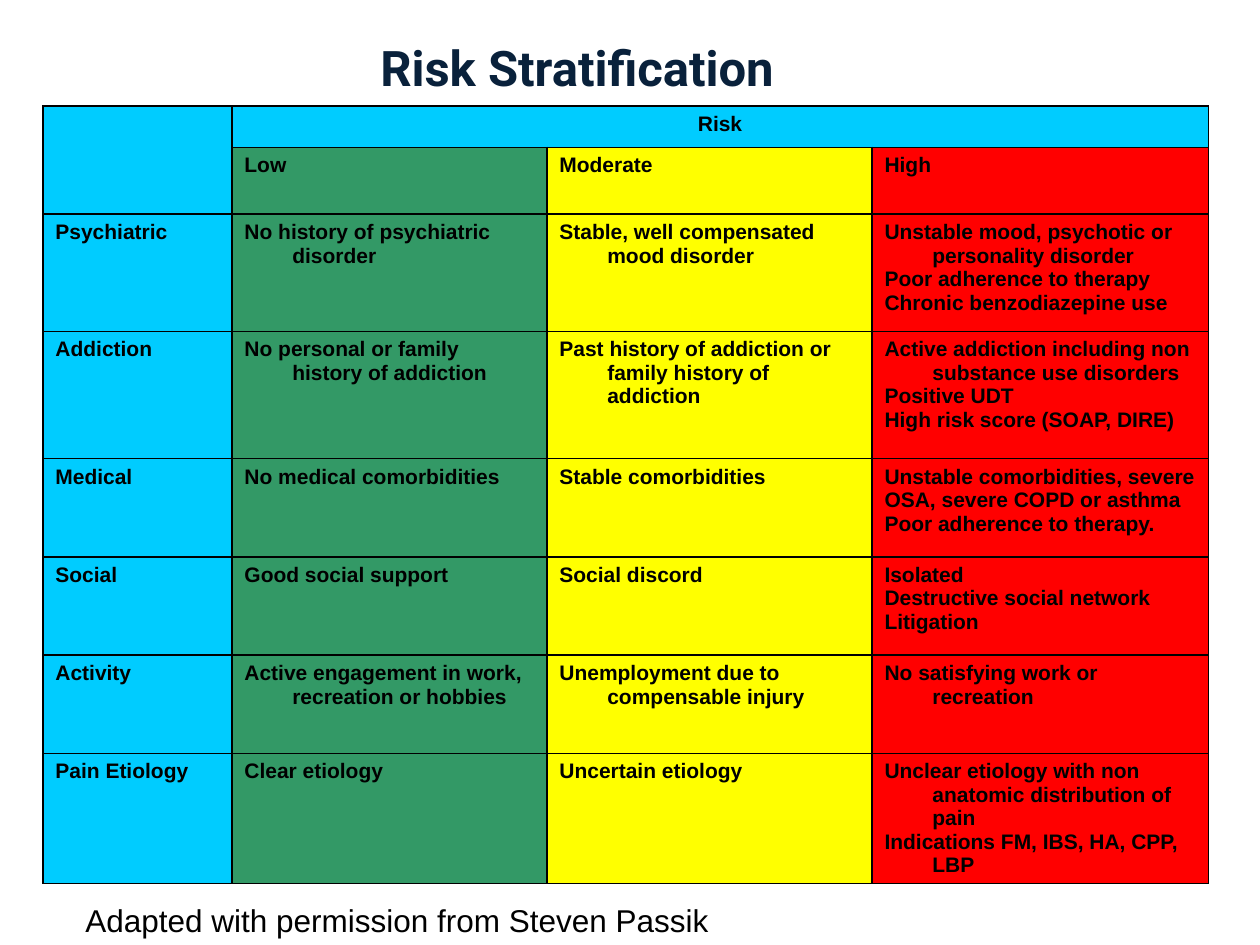
from lxml.etree import SubElement
from pptx import Presentation
from pptx.dml.color import RGBColor
from pptx.enum.text import PP_ALIGN
from pptx.oxml.ns import qn
from pptx.util import Inches, Pt

CYAN, GREEN, YELLOW, RED, BLACK = "00CCFF", "339966", "FFFF00", "FF0000", "000000"
FILLS = [CYAN, GREEN, YELLOW, RED]
WIDTHS = [1.5, 2.5, 2.58, 2.67]
HEIGHTS = [0.33, 0.53, 0.93, 1.01, 0.78, 0.78, 0.78, 1.03]
ROWS = [
    ["", "Risk", "", ""],
    ["", "Low", "Moderate", "High"],
    ["Psychiatric", "No history of psychiatric disorder",
     "Stable, well compensated mood disorder",
     "Unstable mood, psychotic or personality disorder\n"
     "Poor adherence to therapy\nChronic benzodiazepine use"],
    ["Addiction", "No personal or family history of addiction",
     "Past history of addiction or family history of addiction",
     "Active addiction including non substance use disorders\n"
     ">Positive UDT\n>High risk score (SOAP, DIRE)"],
    ["Medical", "No medical comorbidities", "Stable comorbidities",
     "Unstable comorbidities, severe\nOSA, severe COPD or asthma\n"
     "Poor adherence to therapy."],
    ["Social", "Good social support", "Social discord",
     "Isolated\nDestructive social network\nLitigation"],
    ["Activity", "Active engagement in work, recreation or hobbies",
     "Unemployment due to compensable injury",
     "No satisfying work or recreation"],
    ["Pain Etiology", "Clear etiology", "Uncertain etiology",
     "Unclear etiology with non anatomic distribution of pain\n"
     "Indications FM, IBS, HA, CPP, LBP"],
]


def color(code):
    """Turn a hex string into a colour."""
    return RGBColor.from_string(code)


class Deck:
    def __init__(self):
        self.prs = Presentation()
        self.prs.slide_width, self.prs.slide_height = Inches(10), Inches(7.5)
        self.slide = self.prs.slides.add_slide(self.prs.slide_layouts[6])
        self.body = {"name": "Arial", "size": Pt(12), "bold": True}

    def words(self, para, text, form, code):
        run = para.add_run()
        run.text = text
        for key, value in form.items():
            setattr(run.font, key, value)
        run.font.color.rgb = color(code)

    def label(self, text, box, form, code):
        frame = self.slide.shapes.add_textbox(*map(Inches, box)).text_frame
        frame.word_wrap = True
        self.words(frame.paragraphs[0], text, form, code)

    def border(self, cell):
        props = cell._tc.get_or_add_tcPr()
        for side in ("lnL", "lnR", "lnT", "lnB"):
            line = SubElement(props, qn(f"a:{side}"), w=str(Pt(1)))
            fill = SubElement(line, qn("a:solidFill"))
            SubElement(fill, qn("a:srgbClr"), val=BLACK)

    def cell(self, cell, text, code):
        self.border(cell)
        cell.fill.solid()
        cell.fill.fore_color.rgb = color(code)
        frame = cell.text_frame
        for i, line in enumerate(text.split("\n")):
            para = frame.add_paragraph() if i else frame.paragraphs[0]
            para.level = int(line.startswith(">"))
            props = para._p.get_or_add_pPr()
            props.set("marL", str(Inches(0.38)))
            props.set("indent", str(Inches(-0.38)))
            if line:
                self.words(para, line.lstrip(">"), self.body, BLACK)
            else:
                SubElement(para._p, qn("a:endParaRPr"), sz="1200")

    def table(self, rows, left, top):
        box = map(Inches, (left, top, sum(WIDTHS), sum(HEIGHTS)))
        grid = self.slide.shapes.add_table(len(rows), len(WIDTHS), *box).table
        grid.first_row = grid.horz_banding = False
        for col, width in zip(grid.columns, WIDTHS):
            col.width = Inches(width)
        for r, row in enumerate(rows):
            grid.rows[r].height = Inches(HEIGHTS[r])
            for c, text in enumerate(row):
                self.cell(grid.cell(r, c), text, FILLS[c] if r else CYAN)
        grid.cell(0, 0).merge(grid.cell(1, 0))
        grid.cell(0, 1).merge(grid.cell(0, 3))
        grid.cell(0, 1).text_frame.paragraphs[0].alignment = PP_ALIGN.CENTER


def main():
    deck = Deck()
    deck.table(ROWS, 0.34, 0.84)
    deck.label("Adapted with permission from Steven Passik",
               (0.58, 7.1, 5.74, 0.4), {"name": "Arial", "size": Pt(18)}, BLACK)
    deck.label("Risk Stratification", (2.92, 0.25, 6.75, 0.57),
               {"name": "Roboto", "size": Pt(28), "bold": True}, "09213B")
    deck.prs.save("out.pptx")


if __name__ == "__main__":
    main()
